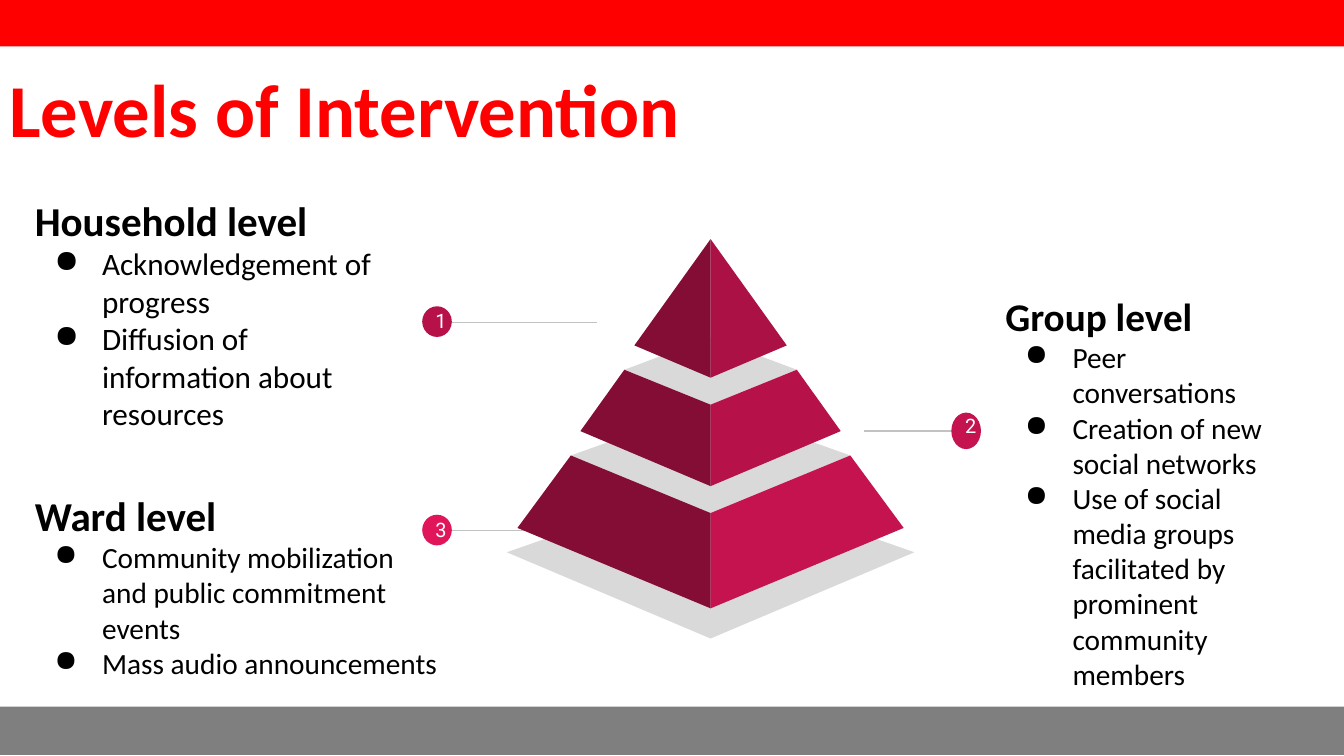
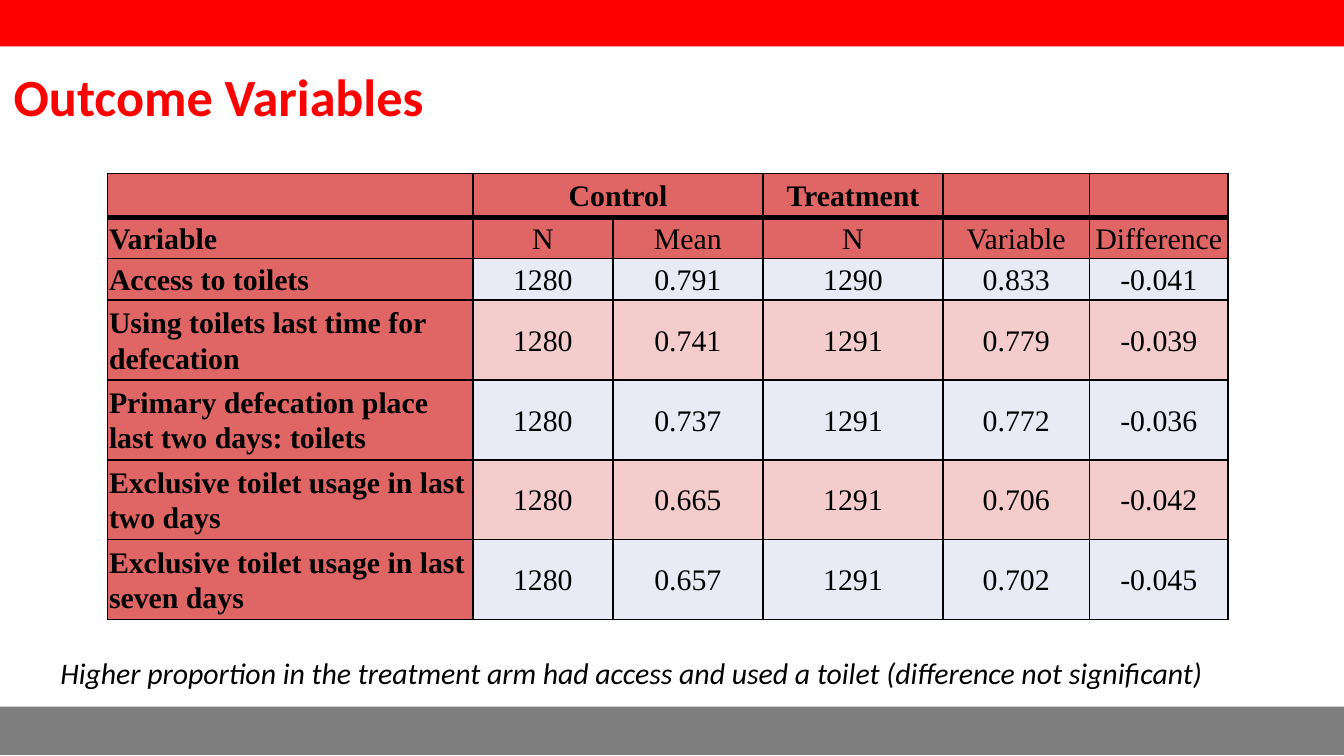
"""Build two slides: the levels of intervention and the outcome variables."""

from lxml.etree import SubElement
from pptx import Presentation
from pptx.dml.color import RGBColor
from pptx.enum.shapes import MSO_CONNECTOR as Connector, MSO_SHAPE as Shape
from pptx.enum.text import MSO_ANCHOR as Anchor, PP_ALIGN as Align
from pptx.oxml.ns import qn
from pptx.util import Cm, Pt

RED = RGBColor(0xFF, 0x00, 0x00)
GRAY = RGBColor(0x7F, 0x7F, 0x7F)
BLACK = RGBColor(0x00, 0x00, 0x00)
WHITE = RGBColor(0xFF, 0xFF, 0xFF)
LINE_GRAY = RGBColor(0xC2, 0xC2, 0xC2)
SHADOW_GRAY = RGBColor(0xD9, 0xD9, 0xD9)
DARK_WINE = RGBColor(0x84, 0x0D, 0x35)
WINE = RGBColor(0xAC, 0x11, 0x45)
CRIMSON = RGBColor(0xB6, 0x12, 0x49)
ROSE = RGBColor(0xC4, 0x13, 0x4E)
PINK = RGBColor(0xE1, 0x16, 0x5A)
HEADER_RED = RGBColor(0xE0, 0x66, 0x66)
ROW_BLUE = RGBColor(0xE8, 0xEB, 0xF5)
ROW_PINK = RGBColor(0xF4, 0xCC, 0xCC)


def add_box(shapes, area, inset_x, inset_y, anchor=Anchor.TOP):
    frame = shapes.add_textbox(*map(Cm, area)).text_frame
    frame.word_wrap = True
    frame.vertical_anchor = anchor
    frame.margin_left = frame.margin_right = Cm(inset_x)
    frame.margin_top = frame.margin_bottom = Cm(inset_y)
    return frame


def add_span(para, text, size, color=BLACK, font="Calibri", bold=False, italic=False):
    span = para.add_run()
    span.text = text
    span.font.name = font
    span.font.size = Pt(size)
    span.font.color.rgb = color
    span.font.bold = bold
    span.font.italic = italic


deck = Presentation()
deck.slide_width, deck.slide_height = Cm(25.4), Cm(14.29)
filled = []

TITLES = [
    ("Levels of Intervention", 40, (0, 1.09, 25.4, 2.64)),
    ("Outcome Variables", 28, (0.08, 1.12, 25.27, 1.93)),
]
BANDS = [((-0.05, -0.03, 25.5, 0.91), RED), ((-0.05, 13.36, 25.45, 0.91), GRAY)]
for title, size, area in TITLES:
    page = deck.slides.add_slide(deck.slide_layouts[6])
    for band_area, color in BANDS:
        filled.append((page.shapes.add_shape(Shape.RECTANGLE, *map(Cm, band_area)), color))
    frame = add_box(page.shapes, area, 0.18, 0.1)
    add_span(frame.paragraphs[0], title, size, RED, bold=True)
levels_page, outcomes_page = deck.slides

LEVELS = [
    {
        "number": "2", "heading": "Group level", "sizes": (21, 15.7), "color": ROSE,
        "points": ["Peer conversations", "Creation of new social networks",
                   "Use of social media groups facilitated by prominent community members"],
        "area": (18.67, 7.49, 5.92, 3.61), "line": (16.33, 18.47, 8.15),
        "dot": (17.98, 7.8, 0.56, 0.69), "label": (17.91, 7.59, 0.71, 1.07),
    },
    {
        "number": "3", "heading": "Ward level", "sizes": (22, 15.7), "color": PINK,
        "points": ["Community mobilization and public commitment events",
                   "Mass audio announcements"],
        "area": (0.33, 9.14, 8.41, 3.84), "line": (11.28, 8.05, 10.03),
        "dot": (7.98, 9.73, 0.56, 0.58), "label": (7.9, 9.55, 0.71, 0.94),
    },
    {
        "number": "1", "heading": "Household level", "sizes": (22, 16.7), "color": CRIMSON,
        "points": ["Acknowledgement of progress",
                   "Diffusion of information about resources"],
        "area": (0.33, 4.37, 7.04, 3.12), "line": (11.28, 8.05, 6.1),
        "dot": (7.98, 5.79, 0.56, 0.58), "label": (7.9, 5.61, 0.71, 0.94),
    },
]
for level in LEVELS:
    shapes = levels_page.shapes.add_group_shape().shapes
    heading_size, point_size = level["sizes"]
    frame = add_box(shapes, level["area"], 0.33, 0.33, Anchor.MIDDLE)
    add_span(frame.paragraphs[0], level["heading"], heading_size, bold=True)
    for point in level["points"]:
        para = frame.add_paragraph()
        props = para._p.get_or_add_pPr()
        props.set("marL", str(Cm(1.27)))
        props.set("indent", str(Cm(-0.9)))
        SubElement(SubElement(props, qn("a:buClr")), qn("a:srgbClr"), val=str(BLACK))
        SubElement(props, qn("a:buChar"), char="●")
        add_span(para, point, point_size)

    start, end, y = map(Cm, level["line"])
    leader = shapes.add_connector(Connector.STRAIGHT, start, y, end, y)
    leader.line.color.rgb = LINE_GRAY
    leader.line.width = Pt(0.75)
    SubElement(leader._element.spPr, qn("a:effectLst"))
    dot = shapes.add_shape(Shape.OVAL, *map(Cm, level["dot"]))
    filled.append((dot, level["color"]))
    para = add_box(shapes, level["label"], 0.33, 0.33).paragraphs[0]
    para.alignment = Align.CENTER
    para.space_after = Pt(21.3)
    add_span(para, level["number"], 10.7, WHITE, "Roboto")

AXIS = 13.43
SHADOWS = [
    (3.85, 9.09, 10.44, 12.07),
    (3.34, 8.53, 9.7, 11.1),
    (2.64, 7.67, 8.61, 9.7),
    (1.63, 6.38, 6.99, 7.65),
]
TIERS = [
    ([(1.63, 6.99), (0, 7.65), (0, 9.19), (2.46, 8.15)], CRIMSON),
    ([(0, 4.52), (1.44, 6.53), (0, 7.14)], WINE),
    ([(2.64, 8.61), (3.65, 9.98), (0, 11.5), (0, 9.7)], ROSE),
]
outlines = [
    ([(-half, middle), (0, bottom), (half, middle), (0, top)], SHADOW_GRAY)
    for half, top, middle, bottom in SHADOWS
]
for points, right_color in TIERS:
    outlines.append(([(-x, y) for x, y in points], DARK_WINE))
    outlines.append((points, right_color))
pyramid = levels_page.shapes.add_group_shape().shapes
for points, color in outlines:
    corners = [(Cm(AXIS + x), Cm(y)) for x, y in points]
    builder = pyramid.build_freeform(*corners[0])
    builder.add_line_segments(corners[1:], close=True)
    filled.append((builder.convert_to_shape(), color))

for shape, color in filled:
    shape.shadow.inherit = False
    shape.fill.solid()
    shape.fill.fore_color.rgb = color
    shape.line.fill.background()

frame = add_box(outcomes_page.shapes, (0.89, 12.12, 24.38, 1.19), 0.25, 0.25)
note = "Higher proportion in the treatment arm had access and used a toilet (difference not significant)"
add_span(frame.paragraphs[0], note, 16, italic=True)

ROWS = [
    ("", "Control", "", "Treatment", "", ""),
    ("Variable", "N", "Mean", "N", "Variable", "Difference"),
    ("Access to toilets", "1280", "0.791", "1290", "0.833", "-0.041"),
    ("Using toilets last time for defecation", "1280", "0.741", "1291", "0.779", "-0.039"),
    ("Primary defecation place last two days: toilets", "1280", "0.737", "1291", "0.772", "-0.036"),
    ("Exclusive toilet usage in last two days", "1280", "0.665", "1291", "0.706", "-0.042"),
    ("Exclusive toilet usage in last seven days", "1280", "0.657", "1291", "0.702", "-0.045"),
]
WIDTHS = [6.91, 2.64, 2.84, 3.4, 2.77, 2.62]
HEIGHTS = [0.77] * 3 + [1.5] * 4
table = outcomes_page.shapes.add_table(
    len(ROWS), len(WIDTHS), Cm(2.03), Cm(3.28), Cm(sum(WIDTHS)), Cm(sum(HEIGHTS))
).table
table.first_row = table.horz_banding = False
for column, width in zip(table.columns, WIDTHS):
    column.width = Cm(width)
for row, height in zip(table.rows, HEIGHTS):
    row.height = Cm(height)
table.cell(0, 1).merge(table.cell(0, 2))

for r, texts in enumerate(ROWS):
    for c, text in enumerate(texts):
        cell = table.cell(r, c)
        cell.vertical_anchor = Anchor.MIDDLE
        cell.margin_left = cell.margin_right = Cm(0.03)
        cell.margin_top = cell.margin_bottom = Cm(0.03)
        props = cell._tc.get_or_add_tcPr()
        for side in "LRTB":
            thick = (r, side) in [(0, "B"), (1, "T")]
            border = SubElement(props, qn(f"a:ln{side}"), w=str(Pt(3 if thick else 1)))
            SubElement(SubElement(border, qn("a:solidFill")), qn("a:srgbClr"), val=str(BLACK))
        cell.fill.solid()
        if r < 2 or c == 0:
            cell.fill.fore_color.rgb = HEADER_RED
        else:
            cell.fill.fore_color.rgb = ROW_PINK if r % 2 else ROW_BLUE
        if text:
            para = cell.text_frame.paragraphs[0]
            para.alignment = Align.CENTER if c else Align.LEFT
            para.line_spacing = 1.07
            add_span(para, text, 16, font="Times New Roman", bold=r == 0 or c == 0)

deck.save("out.pptx")
